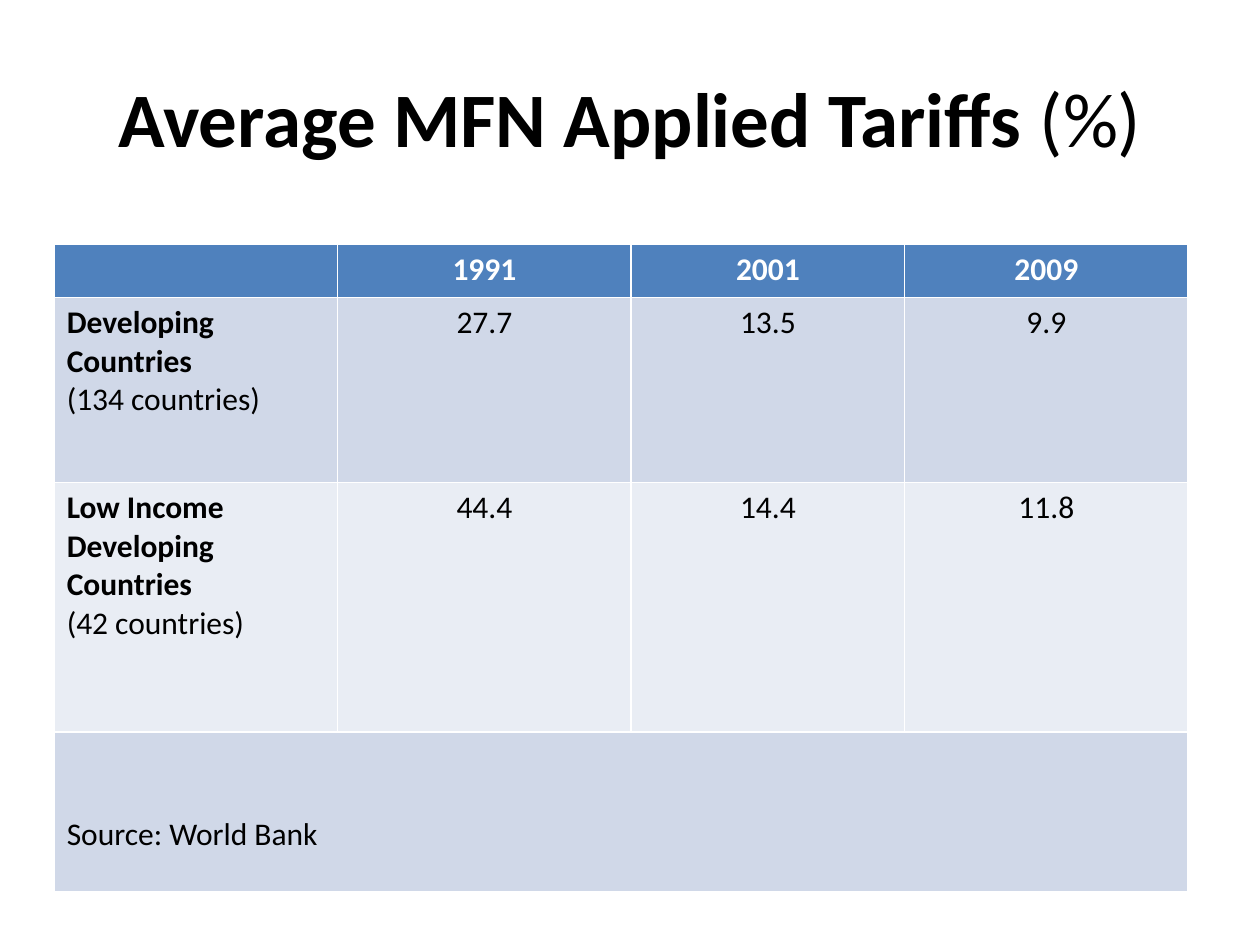
"""Build a slide with a table of average MFN applied tariffs."""
from pptx import Presentation
from pptx.dml.color import RGBColor
from pptx.enum.text import MSO_ANCHOR, PP_ALIGN
from pptx.util import Inches, Pt

CENTER, LEFT = PP_ALIGN.CENTER, PP_ALIGN.LEFT
MIDDLE = MSO_ANCHOR.MIDDLE
FONT = "Calibri"
COLORS = {"header": "4F81BD", "odd": "D0D8E8", "even": "E9EDF4",
          "white": "FFFFFF", "black": "000000"}

TITLE = [("Average MFN Applied Tariffs ", True), ("(%)", False)]
YEARS = ["1991", "2001", "2009"]
TARIFFS = [
    ("Developing Countries", "(134 countries)", ["27.7", "13.5", "9.9"]),
    ("Low Income Developing Countries", "(42 countries)", ["44.4", "14.4", "11.8"]),
]
SOURCE = "Source: World Bank"
COLUMN_WIDTHS = [2.25, 2.33, 2.17, 2.25]
ROW_HEIGHTS = [0.42, 1.47, 1.98, 1.27]
ROW_FILLS = ["header", "odd", "even", "odd"]


def add_run(paragraph, text, size, bold, color="black"):
    run = paragraph.add_run()
    run.text = text
    run.font.name = FONT
    run.font.size = Pt(size)
    run.font.bold = bold
    run.font.color.rgb = RGBColor.from_string(COLORS[color])


def write_cell(cell, lines, align, color="black"):
    frame = cell.text_frame
    for index, (text, bold) in enumerate(lines):
        paragraph = frame.add_paragraph() if index else frame.paragraphs[0]
        paragraph.alignment = align
        add_run(paragraph, text, 18, bold, color)


def add_title(slide):
    title = slide.shapes.title
    title.left, title.top = Inches(0.5), Inches(0.3)
    title.width, title.height = Inches(9), Inches(1.25)
    title.text_frame.vertical_anchor = MIDDLE
    paragraph = title.text_frame.paragraphs[0]
    paragraph.alignment = CENTER
    for text, bold in TITLE:
        add_run(paragraph, text, 44, bold)


def add_tariff_table(slide):
    table = slide.shapes.add_table(
        len(ROW_HEIGHTS), len(COLUMN_WIDTHS), Inches(0.43), Inches(1.94),
        Inches(sum(COLUMN_WIDTHS)), Inches(sum(ROW_HEIGHTS))).table
    for column, width in zip(table.columns, COLUMN_WIDTHS):
        column.width = Inches(width)
    for row, height, fill in zip(table.rows, ROW_HEIGHTS, ROW_FILLS):
        row.height = Inches(height)
        for cell in row.cells:
            cell.fill.solid()
            cell.fill.fore_color.rgb = RGBColor.from_string(COLORS[fill])

    for column, year in enumerate(YEARS, 1):
        write_cell(table.cell(0, column), [(year, True)], CENTER, "white")
    for row, (group, count, rates) in enumerate(TARIFFS, 1):
        write_cell(table.cell(row, 0), [(group, True), (count, False)], LEFT)
        for column, rate in enumerate(rates, 1):
            write_cell(table.cell(row, column), [(rate, False)], CENTER)

    last_row = len(ROW_HEIGHTS) - 1
    source_cell = table.cell(last_row, 0)
    source_cell.merge(table.cell(last_row, len(COLUMN_WIDTHS) - 1))
    source_cell.margin_top = Inches(0.66)
    write_cell(source_cell, [(SOURCE, False)], LEFT)


def main():
    presentation = Presentation()
    presentation.slide_width, presentation.slide_height = Inches(10), Inches(7.5)
    slide = presentation.slides.add_slide(presentation.slide_layouts[5])
    add_title(slide)
    add_tariff_table(slide)
    presentation.save("out.pptx")


if __name__ == "__main__":
    main()
